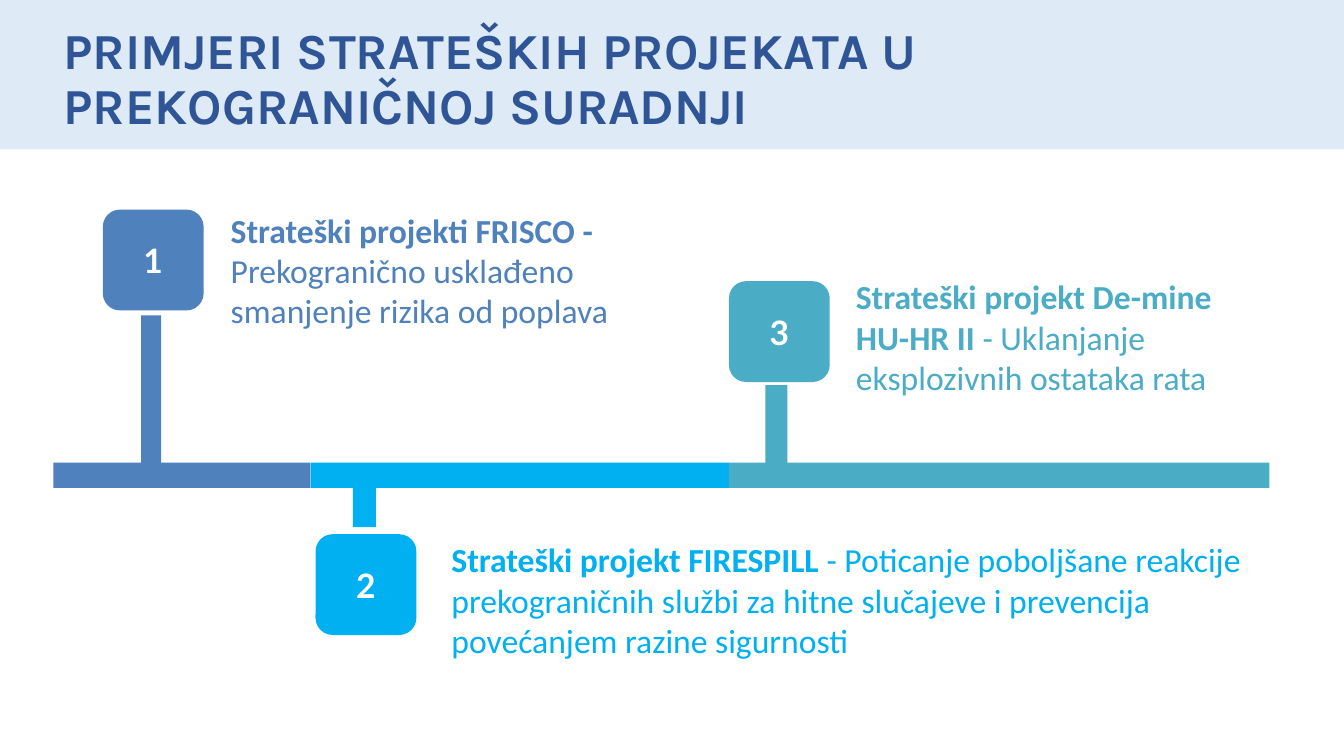
from dataclasses import dataclass

import pptx
import pptx.dml.color
import pptx.enum.shapes
import pptx.enum.text
import pptx.util

Inches = pptx.util.Inches
RGBColor = pptx.dml.color.RGBColor
Shapes = pptx.enum.shapes.MSO_SHAPE
Align = pptx.enum.text.PP_ALIGN
Anchor = pptx.enum.text.MSO_ANCHOR
AutoSize = pptx.enum.text.MSO_AUTO_SIZE

PALE_BLUE = RGBColor(0xDE, 0xEB, 0xF7)
NAVY = RGBColor(0x2F, 0x55, 0x97)
BLUE = RGBColor(0x4F, 0x81, 0xBD)
SKY = RGBColor(0x00, 0xB0, 0xF0)
TEAL = RGBColor(0x4B, 0xAC, 0xC6)
WHITE = RGBColor(0xFF, 0xFF, 0xFF)

BAR_TOP = 4.59
BAR_HEIGHT = 0.25
BADGE_SIZE = 1.0


@dataclass(frozen=True)
class Area:
    left: float
    top: float
    width: float
    height: float

    def lengths(self) -> tuple:
        return tuple(Inches(value) for value in (self.left, self.top, self.width, self.height))


@dataclass(frozen=True)
class Project:
    color: RGBColor
    bar_start: float
    bar_end: float
    stem: Area
    badge_left: float
    badge_top: float
    label: Area
    name: str
    description: str


PROJECTS = [
    Project(BLUE, 0.53, 3.08, Area(1.4, 3.13, 0.2, 1.71), 1.02, 2.08,
            Area(2.19, 2.03, 4.6, 1.31), "Strateški projekti FRISCO -",
            " Prekogranično usklađeno smanjenje rizika od poplava"),
    Project(SKY, 3.08, 7.23, Area(3.5, 4.68, 0.23, 0.55), 3.13, 5.3,
            Area(4.38, 5.3, 8.24, 1.31), "Strateški projekt FIRESPILL ",
            "- Poticanje poboljšane reakcije prekograničnih službi za hitne "
            "slučajeve i prevencija povećanjem razine sigurnosti"),
    Project(TEAL, 7.23, 12.59, Area(7.59, 3.82, 0.22, 0.81), 7.23, 2.79,
            Area(8.39, 2.69, 4.01, 1.31), "Strateški projekt De-mine HU-HR II",
            " - Uklanjanje eksplozivnih ostataka rata"),
]


def apply(target, values: dict) -> None:
    for name, value in values.items():
        setattr(target, name, value)


def add_span(para, text: str, font: str, size: float, color: RGBColor, bold: bool) -> None:
    span = para.add_run()
    span.text = text
    apply(span.font, {"name": font, "size": pptx.util.Pt(size), "bold": bold})
    span.font.color.rgb = color


def add_block(page, kind, area: Area, color: RGBColor):
    block = page.shapes.add_shape(kind, *area.lengths())
    block.shadow.inherit = False
    block.fill.solid()
    block.fill.fore_color.rgb = color
    block.line.fill.background()
    return block


def add_heading(page) -> None:
    band = add_block(page, Shapes.RECTANGLE, Area(0, 0, 13.33, 1.48), PALE_BLUE)
    page.shapes.element.insert(2, band.element)
    title = page.shapes.title
    left, top, width, height = Area(0.53, 0.27, 12.27, 1.06).lengths()
    apply(title, {"left": left, "top": top, "width": width, "height": height})
    apply(title.text_frame, {"auto_size": AutoSize.NONE, "word_wrap": True,
                             "vertical_anchor": Anchor.MIDDLE})
    para = title.text_frame.paragraphs[0]
    apply(para, {"alignment": Align.LEFT, "line_spacing": 0.9})
    add_span(para, "PRIMJERI STRATEŠKIH PROJEKATA U PREKOGRANIČNOJ SURADNJI",
             "Karla", 36, NAVY, True)


def add_project(page, number: int, project: Project) -> None:
    bar = Area(project.bar_start, BAR_TOP, project.bar_end - project.bar_start, BAR_HEIGHT)
    for area in (project.stem, bar):
        add_block(page, Shapes.RECTANGLE, area, project.color)

    badge_area = Area(project.badge_left, project.badge_top, BADGE_SIZE, BADGE_SIZE)
    badge = add_block(page, Shapes.ROUNDED_RECTANGLE, badge_area, project.color)
    badge.adjustments[0] = 0.17
    badge.text_frame.vertical_anchor = Anchor.MIDDLE
    para = badge.text_frame.paragraphs[0]
    para.alignment = Align.CENTER
    add_span(para, str(number), "Lato", 24, WHITE, True)

    box = page.shapes.add_textbox(*project.label.lengths())
    apply(box.text_frame, {"word_wrap": True, "auto_size": AutoSize.SHAPE_TO_FIT_TEXT})
    para = box.text_frame.paragraphs[0]
    add_span(para, project.name, "Calibri", 24, project.color, True)
    add_span(para, project.description, "Calibri", 24, project.color, False)


def main() -> None:
    deck = pptx.Presentation()
    apply(deck, {"slide_width": Inches(13.33), "slide_height": Inches(7.5)})
    page = deck.slides.add_slide(deck.slide_layouts[5])
    add_heading(page)
    for number, project in enumerate(PROJECTS, 1):
        add_project(page, number, project)
    deck.save("out.pptx")


if __name__ == "__main__":
    main()
